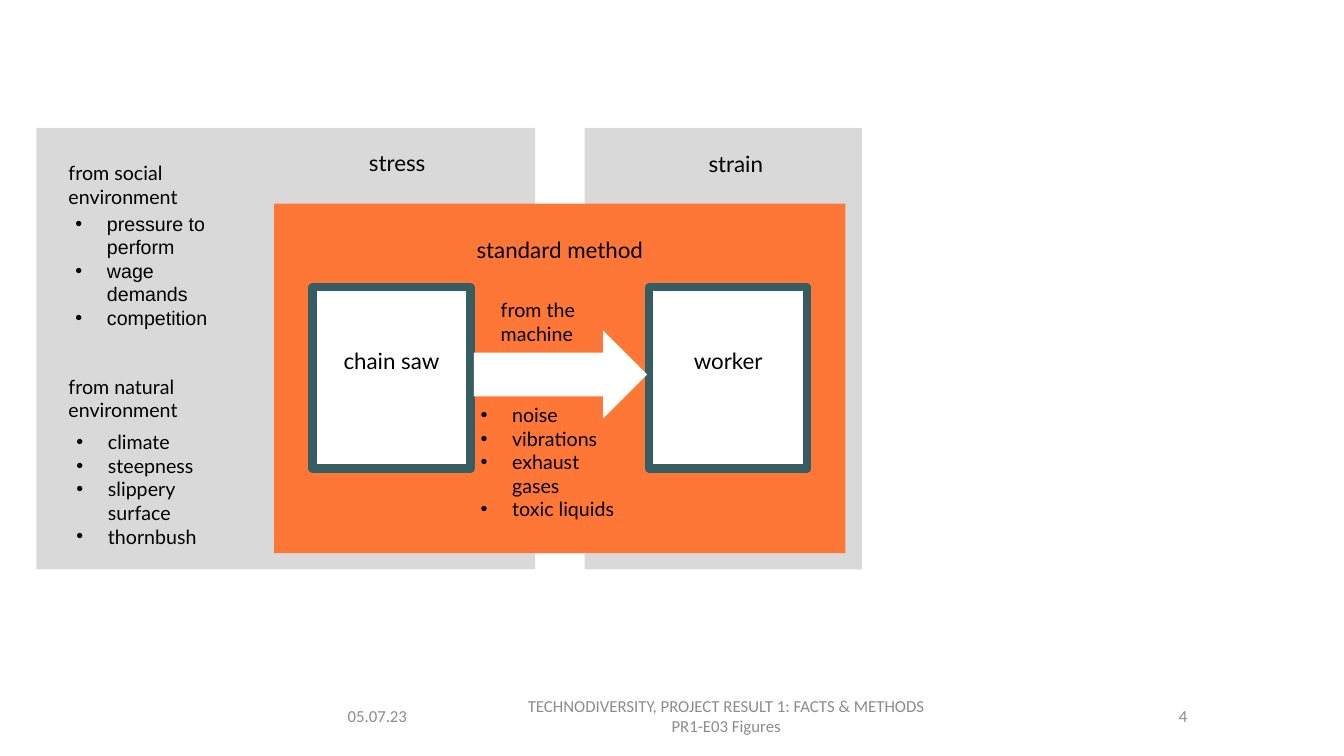
from lxml.etree import SubElement
from pptx import Presentation
from pptx.dml.color import RGBColor
from pptx.enum.shapes import MSO_SHAPE as Kind
from pptx.enum.text import MSO_ANCHOR as Anchor, PP_ALIGN as Align
from pptx.oxml.ns import qn
from pptx.util import Pt

BLACK = RGBColor(0, 0, 0)
WHITE = RGBColor(255, 255, 255)
GRAY = RGBColor(0xD9, 0xD9, 0xD9)
MUTED = RGBColor(0x8C, 0x8C, 0x8C)
ORANGE = RGBColor(0xFF, 0x77, 0x37)
TEAL = RGBColor(0x35, 0x5D, 0x62)

# left, width, lines, alignment
FOOTER = [
    (241.2, 96.5, ["05.07.23"], Align.LEFT),
    (349.9, 337.7, ["TECHNODIVERSITY, PROJECT RESULT 1: FACTS & METHODS",
                    "PR1-E03 Figures"], Align.CENTER),
    (703.4, 151.9, ["4"], Align.RIGHT),
]
# left, width
PANELS = [(417.6, 198), (25.9, 356.4)]
# text, left
BOXES = [("chain saw", 223.2), ("worker", 463.7)]
# text, left, top
HEADS = [("strain", 474.5, 103.7), ("stress", 232.6, 103)]
LABELS = [
    ("from the machine", 350.6, 209.5),
    ("from social environment", 41.8, 111.6),
    ("from natural environment", 41.8, 264.2),
]
# items, left, top, height, font
LISTS = [
    (["noise", "vibrations", "exhaust gases", "toxic liquids"],
     336.2, 284.4, 108.7, "Lato"),
    (["pressure to perform", "wage demands", "competition"],
     46.8, 147.6, 92.2, "Arial"),
    (["climate", "steepness", "slippery surface", "thornbush"],
     47.5, 303.8, 92.2, "Lato"),
]
ROW = 19.5  # height of one 16 pt line
INSET = 3.6
INDENT = 22.5
NOTE_W = 114.5

deck = Presentation()
deck.slide_width, deck.slide_height = Pt(960), Pt(540)
slide = deck.slides.add_slide(deck.slide_layouts[6])


def write(frame, lines, size, font="Lato", color=BLACK, align=Align.LEFT,
          bullet=False):
    frame.word_wrap = True
    for i, line in enumerate(lines):
        para = frame.paragraphs[0] if i == 0 else frame.add_paragraph()
        para.alignment = align
        if bullet:
            props = para._p.get_or_add_pPr()
            props.set("marL", str(Pt(INDENT)))
            props.set("indent", str(-Pt(INDENT)))
            SubElement(props, qn("a:buFont")).set("typeface", "Arial")
            SubElement(props, qn("a:buChar")).set("char", "•")
        run = para.add_run()
        run.text = line
        run.font.size = Pt(size)
        run.font.name = font
        run.font.color.rgb = color


def add_text(place, lines, size, **style):
    frame = slide.shapes.add_textbox(*map(Pt, place)).text_frame
    write(frame, lines, size, **style)
    return frame


def add_block(place, fill, kind=Kind.RECTANGLE, edge=None, text=None, skip=0):
    """Draw a filled shape; its text starts `skip` rows below the top."""
    block = slide.shapes.add_shape(kind, *map(Pt, place))
    block.shadow.inherit = False
    block.fill.solid()
    block.fill.fore_color.rgb = fill
    if edge is None:
        block.line.fill.background()
    else:
        block.line.color.rgb = edge
        block.line.width = Pt(6)
    if text:
        frame = block.text_frame
        frame.vertical_anchor = Anchor.TOP
        frame.margin_top = Pt(INSET + skip * ROW)
        write(frame, [text], 16, align=Align.CENTER)


for left, width, lines, align in FOOTER:
    foot = add_text((left, 496.8, width, 28.8), lines, 12,
                    font="Calibri", color=MUTED, align=align)
    foot.vertical_anchor = Anchor.MIDDLE

for left, width in PANELS:
    add_block((left, 91.4, width, 315.4), GRAY)
add_block((195.8, 145.4, 408.2, 249.8), ORANGE,
          text="standard method", skip=1)
for text, left in BOXES:
    add_block((left, 205.2, 113, 129.6), WHITE, edge=TEAL, text=text, skip=2)
add_block((338.4, 236.2, 123.8, 62.6), WHITE, Kind.RIGHT_ARROW)

for text, left, top in HEADS:
    add_text((left, top, 102.2, 26.6), [text], 16, align=Align.CENTER)
for text, left, top in LABELS:
    add_text((left, top, NOTE_W, 41), [text], 14)
for items, left, top, height, font in LISTS:
    add_text((left, top, NOTE_W, height), items, 14, font=font, bullet=True)

deck.save("out.pptx")
